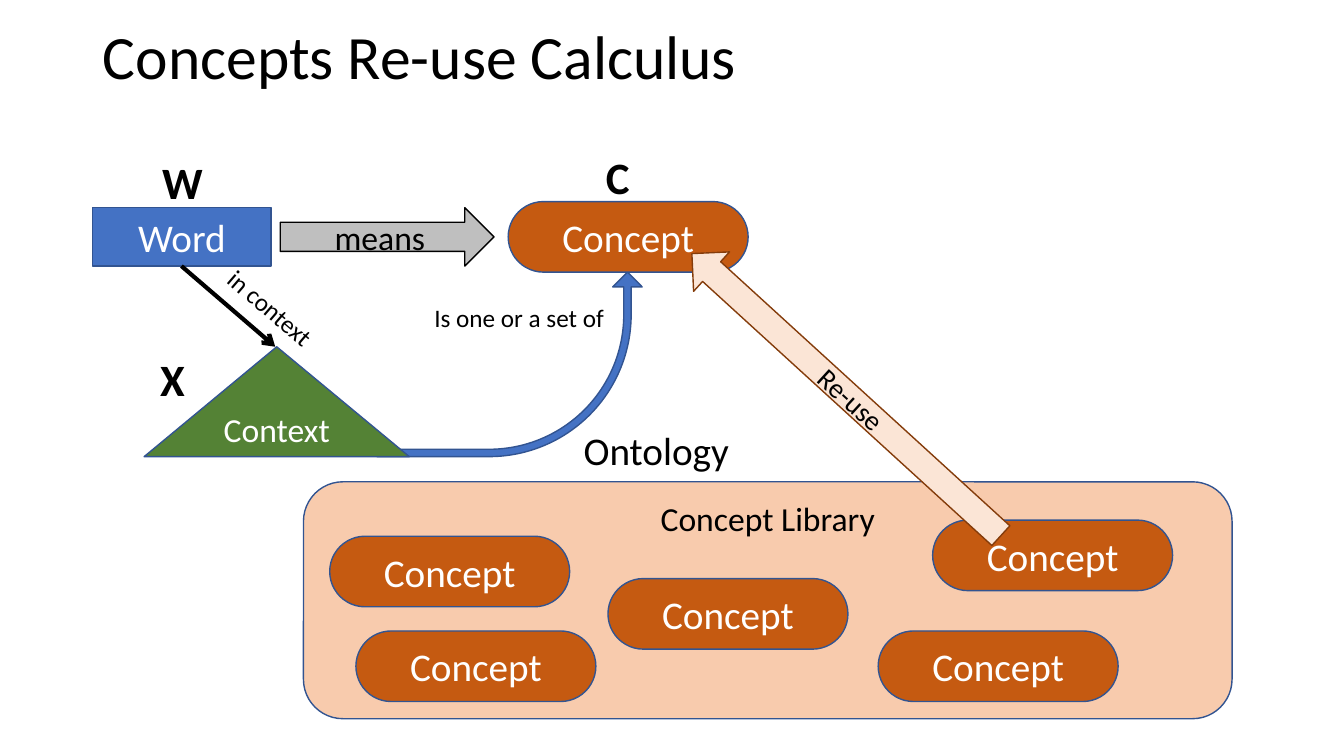
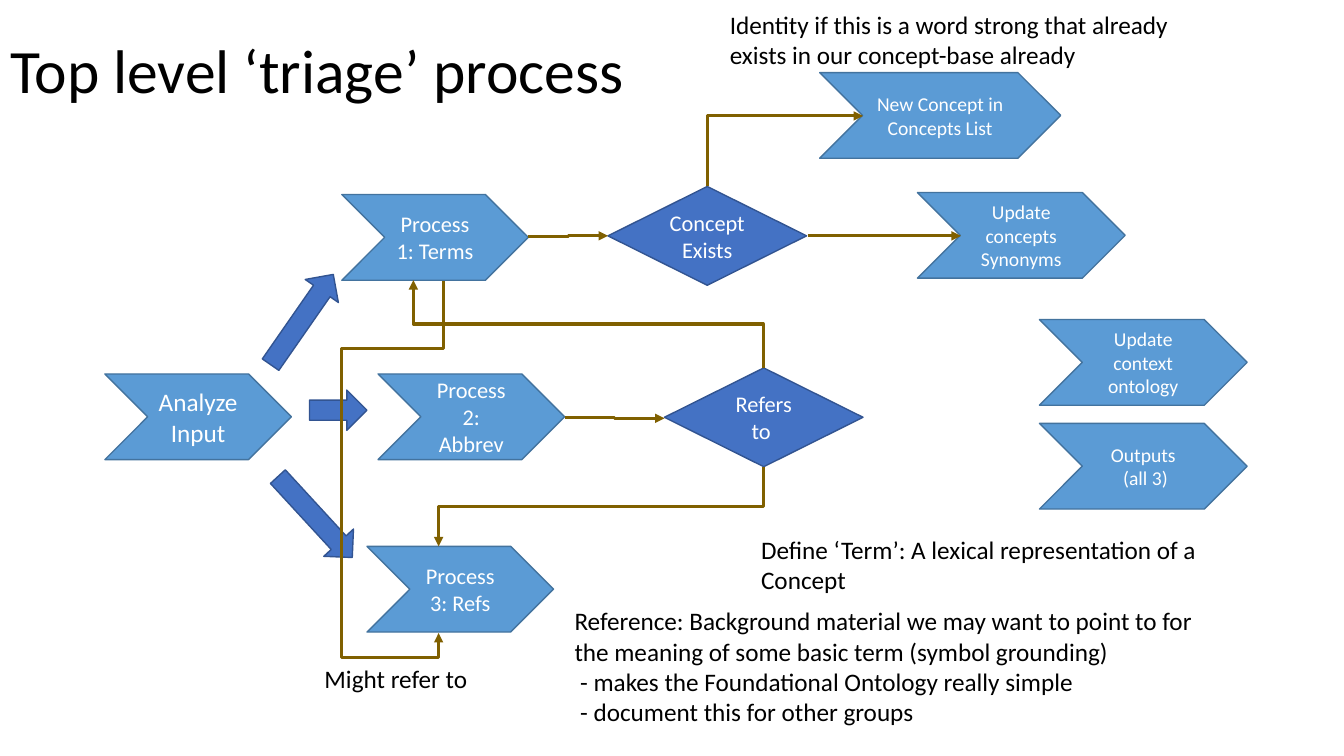
"""Build two slides on concept re-use and the triage process."""
from lxml import etree
from pptx import Presentation
from pptx import util as u
from pptx.dml.color import RGBColor
from pptx.enum import shapes, text
from pptx.oxml.ns import qn

SCALE = 9144
KINDS = shapes.MSO_SHAPE
TOP, LEFT, BOTTOM, RIGHT = range(4)


def px(length):
    return u.Emu(round(length * SCALE))


def colour(value):
    return RGBColor.from_string(value)


def write(frame, words, size=18, ink="000000", bold=False, align=text.PP_ALIGN.LEFT,
          anchor=text.MSO_ANCHOR.TOP, spacing=None):
    frame.text = words
    frame.vertical_anchor = anchor
    for paragraph in frame.paragraphs:
        paragraph.alignment = align
        paragraph.line_spacing = spacing
        for run in paragraph.runs:
            run.font.name = Deck.FONT
            run.font.size = u.Pt(size)
            run.font.bold = bold
            run.font.color.rgb = colour(ink)


class Deck:
    FONT = "Calibri"
    BLUE, SKY, RUST, GREEN = "4472C4", "5B9BD5", "C55A11", "548235"
    EDGE, SKY_EDGE, ROUTE = "325491", "43739E", "806000"
    WHITE, BLACK = "FFFFFF", "000000"

    def __init__(self):
        self.presentation = Presentation()
        self.presentation.slide_width = px(1333)
        self.presentation.slide_height = px(750)
        self.slide = None

    def start(self, title, box):
        layout = self.presentation.slide_layouts.get_by_name("Title Only")
        self.slide = self.presentation.slides.add_slide(layout)
        shape = self.slide.shapes.title
        shape.left, shape.top, shape.width, shape.height = map(px, box)
        write(shape.text_frame, title, size=44, anchor=text.MSO_ANCHOR.MIDDLE, spacing=0.9)

    def shape(self, kind, box, words="", fill=BLUE, edge=EDGE, size=28, ink=WHITE,
              turn=0, flip=False, adjust=(), anchor=text.MSO_ANCHOR.MIDDLE):
        shape = self.slide.shapes.add_shape(kind, *map(px, box))
        shape.shadow.inherit = False
        shape.fill.solid()
        shape.fill.fore_color.rgb = colour(fill)
        shape.line.color.rgb = colour(edge)
        shape.line.width = u.Pt(1)
        shape.rotation = turn
        if flip:
            shape.element.spPr.find(qn("a:xfrm")).set("flipH", "1")
        for index, value in enumerate(adjust):
            shape.adjustments[index] = value
        if words:
            write(shape.text_frame, words, size, ink, anchor=anchor,
                  align=text.PP_ALIGN.CENTER)
        return shape

    def concept(self, left, top):
        self.shape(KINDS.ROUNDED_RECTANGLE, (left, top, 238, 70), "Concept",
                   fill=self.RUST, adjust=[0.5])

    def step(self, left, top, words, width=185, size=16):
        return self.shape(KINDS.CHEVRON, (left, top, width, 85), words,
                          fill=self.SKY, edge=self.SKY_EDGE, size=size)

    def decision(self, left, top, words):
        return self.shape(KINDS.FLOWCHART_DECISION, (left, top, 197, 98), words, size=16)

    def label(self, box, words, size=18, bold=False, wrap=False, turn=0):
        shape = self.slide.shapes.add_textbox(*map(px, box))
        shape.rotation = turn
        shape.text_frame.word_wrap = wrap
        shape.text_frame.auto_size = text.MSO_AUTO_SIZE.SHAPE_TO_FIT_TEXT
        write(shape.text_frame, words, size, bold=bold)

    def finish_line(self, connector, ink, width, head):
        connector.line.color.rgb = colour(ink)
        connector.line.width = u.Pt(width)
        properties = connector.element.spPr
        etree.SubElement(properties.find(qn("a:ln")), qn("a:tailEnd"), type=head)
        etree.SubElement(properties, qn("a:effectLst"))

    def arrow(self, start, end):
        connector = self.slide.shapes.add_connector(
            shapes.MSO_CONNECTOR.STRAIGHT, *map(px, start + end))
        self.finish_line(connector, self.BLACK, 3, "arrow")

    def elbow(self, start, end, source=None, target=None, vertical=False, bends=3,
              adjust=(0.5,)):
        connector = self.slide.shapes.add_connector(
            shapes.MSO_CONNECTOR.ELBOW, *map(px, start + end))
        if source:
            connector.begin_connect(*source)
        if target:
            connector.end_connect(*target)
        across, down = end[0] - start[0], end[1] - start[1]
        turn, mirrored = 0, down < 0
        width, height = abs(across), abs(down)
        if vertical:
            turn = 90 if down > 0 else 270
            mirrored = (across > 0) == (down > 0)
            width, height = height, width
        connector.left = px((start[0] + end[0] - width) / 2)
        connector.top = px((start[1] + end[1] - height) / 2)
        connector.width, connector.height = px(width), px(height)
        frame = connector.element.spPr.find(qn("a:xfrm"))
        frame.set("rot", str(turn * 60000))
        frame.set("flipH", "0")
        frame.set("flipV", str(int(mirrored)))
        geometry = connector.element.spPr.find(qn("a:prstGeom"))
        geometry.set("prst", f"bentConnector{bends}")
        guides = geometry.find(qn("a:avLst"))
        for index, value in enumerate(adjust, 1):
            etree.SubElement(guides, qn("a:gd"), name=f"adj{index}",
                             fmla=f"val {round(value * 100000)}")
        self.finish_line(connector, self.ROUTE, 2.25, "triangle")


def build_calculus(deck):
    deck.start("Concepts Re-use Calculus", (92, 0, 1150, 119))
    deck.shape(KINDS.BENT_ARROW, (414, 230, 183, 263), turn=90, flip=True,
               adjust=[0.04, 0.08, 0.08, 0.77])
    deck.shape(KINDS.ROUNDED_RECTANGLE, (301, 478, 921, 235), "Concept Library",
               fill="F8CBAD", size=24, ink=deck.BLACK, anchor=text.MSO_ANCHOR.TOP)
    deck.shape(KINDS.RECTANGLE, (92, 206, 177, 58), "Word")
    deck.shape(KINDS.ISOSCELES_TRIANGLE, (143, 344, 263, 109), "Context",
               fill=deck.GREEN, size=24, adjust=[0.5])
    deck.shape(KINDS.RIGHT_ARROW, (278, 206, 212, 58), "means", fill="BFBFBF",
               edge=deck.BLACK, size=24, ink=deck.BLACK)
    deck.arrow((180, 264), (273, 344))
    deck.label((208, 286, 122, 40), "in context", turn=40.7)
    for left, top, width, letter in ((151, 149, 61, "W"), (149, 344, 45, "X"),
                                     (591, 144, 45, "C")):
        deck.label((left, top, width, 64), letter, size=32, bold=True)
    for left, top in ((504, 200), (327, 532), (603, 574), (925, 516), (871, 626), (353, 626)):
        deck.concept(left, top)
    deck.shape(KINDS.RIGHT_ARROW, (632, 365, 415, 53), "Re-use", fill="FBE5D6",
               edge="843C0B", size=20, ink=deck.BLACK, turn=42.4, flip=True)
    deck.label((569, 418, 166, 57), "Ontology", size=28)
    deck.label((421, 295, 378, 40), "Is one or a set of", wrap=True)


def build_triage(deck):
    deck.start("Top level ‘triage’ process", (0, 0, 1150, 145))
    deck.step(104, 371, "Analyze Input", size=18)
    terms = deck.step(339, 193, "Process 1: Terms")
    abbreviations = deck.step(375, 371, "Process 2: Abbrev")
    references = deck.step(364, 542, "Process 3: Refs")
    for left, top, width, turn in ((307, 387, 57, 0), (258, 493, 109, 47.4),
                                   (245, 297, 109, 304.8)):
        deck.shape(KINDS.RIGHT_ARROW, (left, top, width, 40), turn=turn)
    synonyms = deck.step(910, 191, "Update concepts Synonyms", 206, 14)
    new_concept = deck.step(813, 72, "New Concept in Concepts List", 239, 14)
    deck.step(1031, 317, "Update context ontology", 206, 14)
    deck.step(1031, 420, "Outputs\n (all 3)", 206, 14)
    exists = deck.decision(603, 185, "Concept Exists")
    refers = deck.decision(659, 365, "Refers to ")

    deck.elbow((440, 279), (435, 628), target=(references, BOTTOM), vertical=True,
               bends=5, adjust=(0.19, 20.2, 1.07))
    deck.elbow((702, 185), (856, 115), (exists, TOP), (new_concept, LEFT),
               vertical=True, bends=2, adjust=())
    deck.elbow((801, 234), (953, 234), (exists, RIGHT), (synonyms, LEFT))
    deck.elbow((524, 235), (603, 234), (terms, RIGHT), (exists, LEFT))
    deck.elbow((560, 414), (659, 415), (abbreviations, RIGHT), (refers, LEFT))
    deck.elbow((757, 365), (410, 278), (refers, TOP), (terms, BOTTOM), vertical=True)
    deck.elbow((757, 463), (435, 542), (refers, BOTTOM), (references, TOP), vertical=True)

    deck.label((312, 653, 163, 40), "Might refer to")
    deck.label((714, 4, 479, 71), "Identity if this is a word strong that already "
               "exists in our concept-base already", wrap=True)
    deck.label((745, 525, 479, 71),
               "Define ‘Term’: A lexical representation of a Concept", wrap=True)
    deck.label((560, 596, 653, 131),
               "Reference: Background material we may want to point to for "
               "the meaning of some basic term (symbol grounding)\n"
               " - makes the Foundational Ontology really simple\n"
               " - document this for other groups", wrap=True)


def main():
    deck = Deck()
    build_calculus(deck)
    build_triage(deck)
    deck.presentation.save("out.pptx")


if __name__ == "__main__":
    main()
